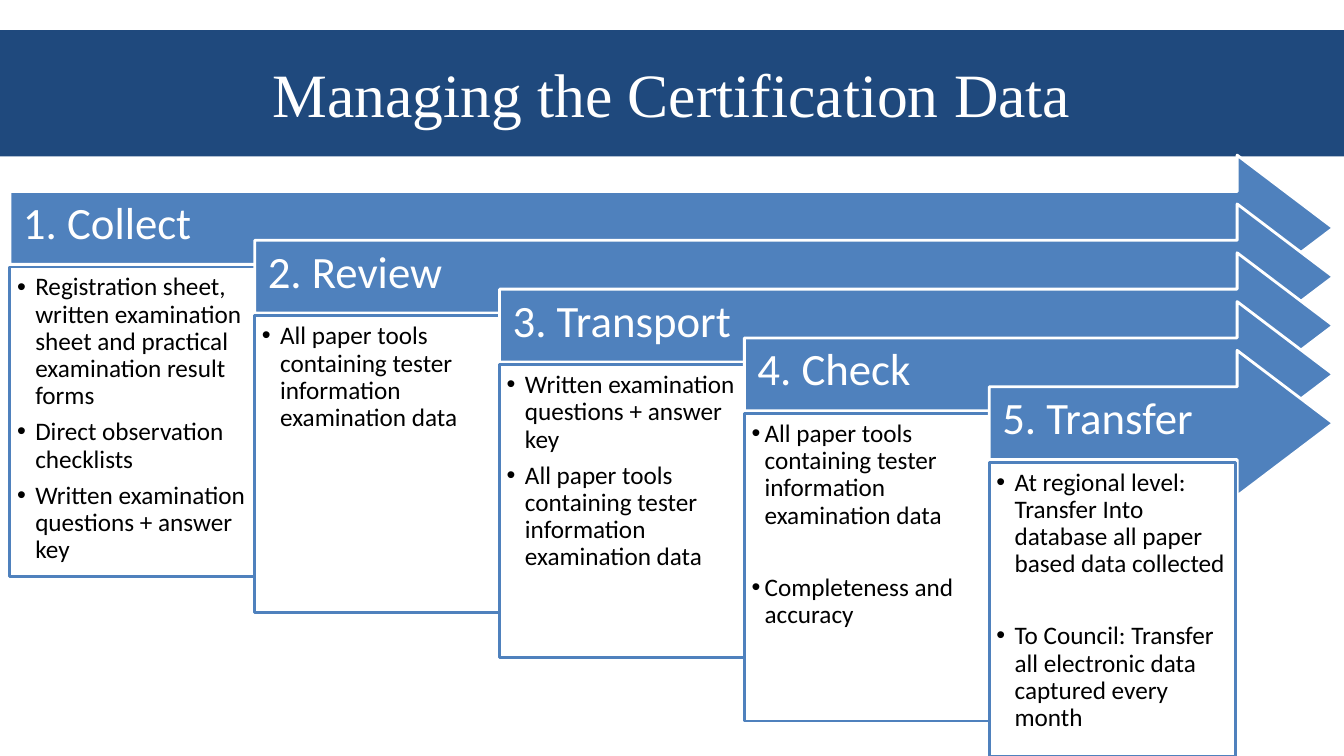
from dataclasses import dataclass

from lxml.etree import SubElement
from pptx import Presentation
from pptx.dml.color import RGBColor
from pptx.enum.shapes import MSO_SHAPE
from pptx.enum.text import MSO_ANCHOR, MSO_AUTO_SIZE, PP_ALIGN
from pptx.oxml.ns import qn
from pptx.util import Cm, Pt


@dataclass(frozen=True)
class Theme:
    navy: RGBColor = RGBColor(0x1F, 0x49, 0x7D)
    blue: RGBColor = RGBColor(0x4F, 0x81, 0xBD)
    white: RGBColor = RGBColor(0xFF, 0xFF, 0xFF)
    black: RGBColor = RGBColor(0x00, 0x00, 0x00)
    title_font: str = "Times New Roman"
    body_font: str = "Calibri"
    title_size: Pt = Pt(44)
    step_size: Pt = Pt(32)
    body_size: Pt = Pt(18)
    outline: Pt = Pt(2)
    paragraph_gap: Pt = Pt(6.3)
    wide_gap: Pt = Pt(25.7)


THEME = Theme()

SLIDE_WIDTH, SLIDE_HEIGHT = 33.87, 19.05
FIRST_LEFT, FIRST_TOP = 0.25, 3.91
STEP_RIGHT, STEP_DOWN = 6.17, 1.23
ARROW_TIP, ARROW_HEIGHT = 33.6, 3.67
CARD_DROP, CARD_WIDTH = 2.82, 6.2

PAPER_TOOLS = "All paper tools containing tester information examination data"
QUESTIONS = "Written examination questions + answer key"
STEPS = [
    ("1. Collect", 7.8, 0.46, False, [
        "Registration sheet, written examination sheet and practical examination result forms",
        "Direct observation checklists",
        QUESTIONS,
    ]),
    ("2. Review", 7.47, 0.46, False, [PAPER_TOOLS]),
    ("3. Transport", 7.37, 0.46, False, [QUESTIONS, PAPER_TOOLS]),
    ("4. Check", 7.75, 0.33, True, [PAPER_TOOLS, "Completeness and accuracy"]),
    ("5. Transfer", 7.4, 0.46, True, [
        "At regional level: Transfer Into database all paper based data collected",
        "To Council: Transfer all electronic data captured every month",
    ]),
]


def add_span(para, text, font, size, color):
    span = para.add_run()
    span.text = text
    span.font.name = font
    span.font.size = size
    span.font.color.rgb = color


def set_margins(frame, left, top, right, bottom):
    frame.margin_left, frame.margin_top = Cm(left), Cm(top)
    frame.margin_right, frame.margin_bottom = Cm(right), Cm(bottom)


def format_paragraph(para):
    para.alignment = PP_ALIGN.LEFT
    para.line_spacing = 0.9
    para.space_after = THEME.paragraph_gap


def add_bullet(para, indent):
    properties = para._p.get_or_add_pPr()
    properties.set("marL", str(Cm(indent)))
    properties.set("indent", str(-Cm(indent)))
    SubElement(properties, qn("a:buFont")).set("typeface", "Arial")
    SubElement(properties, qn("a:buChar")).set("char", "•")


def add_box(page, kind, left, top, width, height, fill, line):
    box = page.shapes.add_shape(kind, Cm(left), Cm(top), Cm(width), Cm(height))
    box.shadow.inherit = False
    box.fill.solid()
    box.fill.fore_color.rgb = fill
    box.line.color.rgb = line
    box.line.width = THEME.outline
    box.text_frame.word_wrap = True
    return box


def add_title(page, text):
    title = page.shapes.title
    title.left, title.top = Cm(0), Cm(0.76)
    title.width, title.height = Cm(SLIDE_WIDTH), Cm(3.18)
    title.fill.solid()
    title.fill.fore_color.rgb = THEME.navy
    frame = title.text_frame
    frame.auto_size = MSO_AUTO_SIZE.NONE
    frame.vertical_anchor = MSO_ANCHOR.MIDDLE
    para = frame.paragraphs[0]
    para.alignment = PP_ALIGN.CENTER
    add_span(para, text, THEME.title_font, THEME.title_size, THEME.white)


def add_step_arrow(page, left, top, label):
    arrow = add_box(page, MSO_SHAPE.RIGHT_ARROW, left, top, ARROW_TIP - left,
                    ARROW_HEIGHT, THEME.blue, THEME.white)
    arrow.adjustments[0] = 0.5
    arrow.adjustments[1] = 0.66
    frame = arrow.text_frame
    frame.vertical_anchor = MSO_ANCHOR.MIDDLE
    set_margins(frame, 0.33, 0.2, 0, 0.35)
    para = frame.paragraphs[0]
    format_paragraph(para)
    add_span(para, label, THEME.body_font, THEME.step_size, THEME.white)


def add_card(page, left, top, height, indent, spaced, items):
    card = add_box(page, MSO_SHAPE.RECTANGLE, left, top, CARD_WIDTH, height,
                   THEME.white, THEME.blue)
    frame = card.text_frame
    frame.vertical_anchor = MSO_ANCHOR.TOP
    set_margins(frame, 0.18, 0.18, 0.18, 0.18)
    for index, item in enumerate(items):
        para = frame.add_paragraph() if index else frame.paragraphs[0]
        format_paragraph(para)
        if spaced and index:
            para.space_before = THEME.wide_gap
        add_bullet(para, indent)
        add_span(para, item, THEME.body_font, THEME.body_size, THEME.black)


def main():
    deck = Presentation()
    deck.slide_width, deck.slide_height = Cm(SLIDE_WIDTH), Cm(SLIDE_HEIGHT)
    page = deck.slides.add_slide(deck.slide_layouts[5])
    add_title(page, "Managing the Certification Data")
    for index, (label, height, indent, spaced, items) in enumerate(STEPS):
        left = FIRST_LEFT + index * STEP_RIGHT
        top = FIRST_TOP + index * STEP_DOWN
        add_step_arrow(page, left, top, label)
        add_card(page, left, top + CARD_DROP, height, indent, spaced, items)
    deck.save("out.pptx")


if __name__ == "__main__":
    main()
